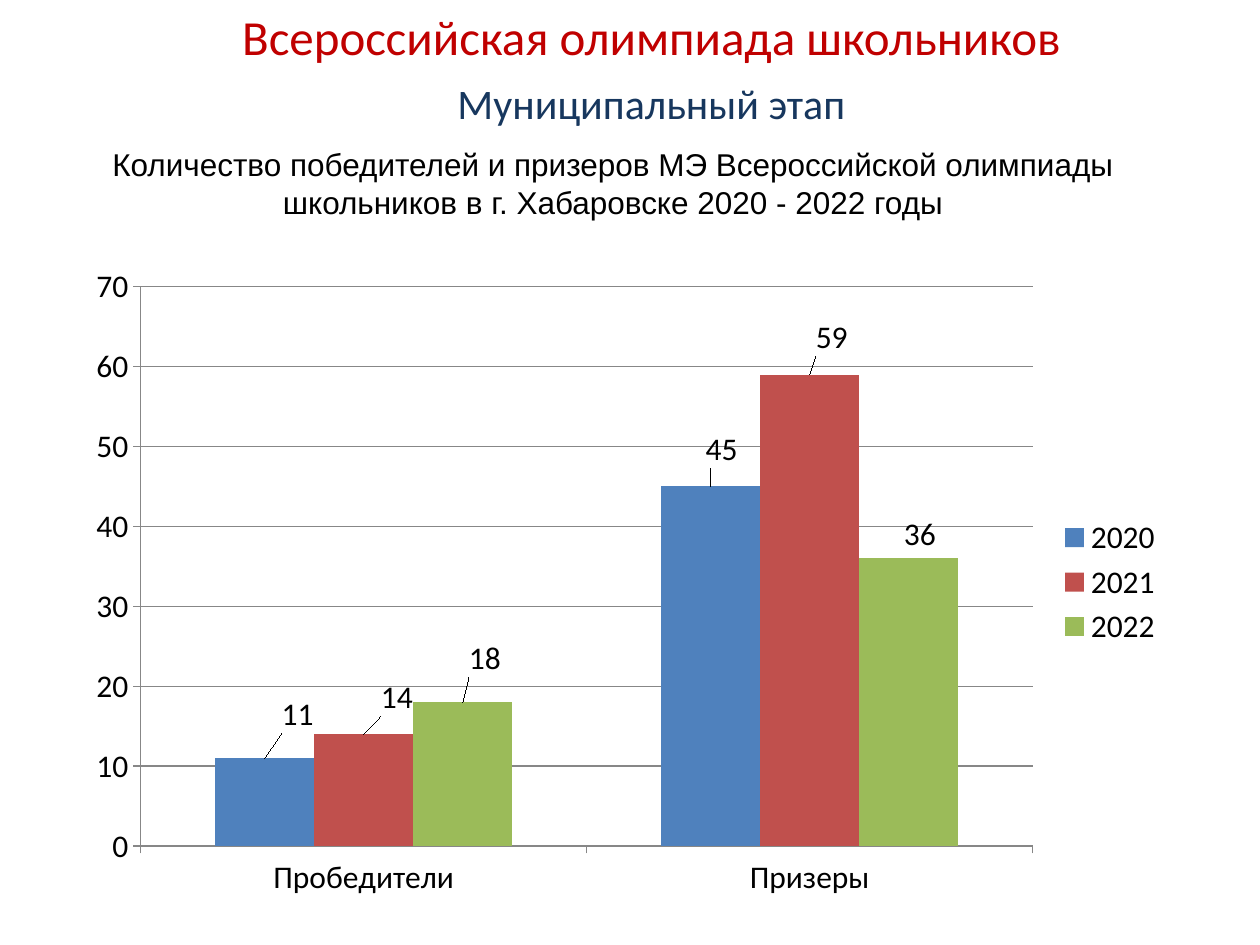
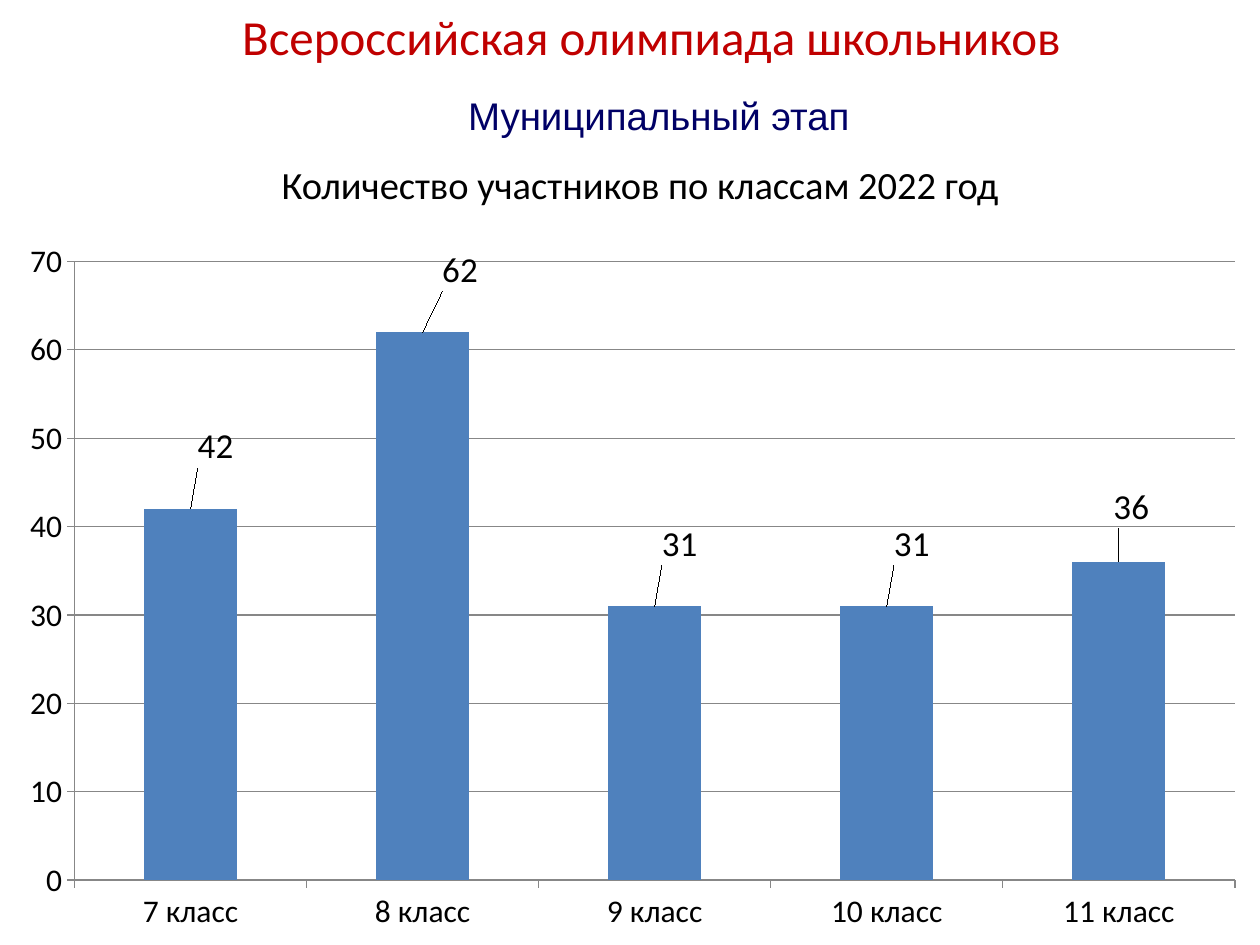
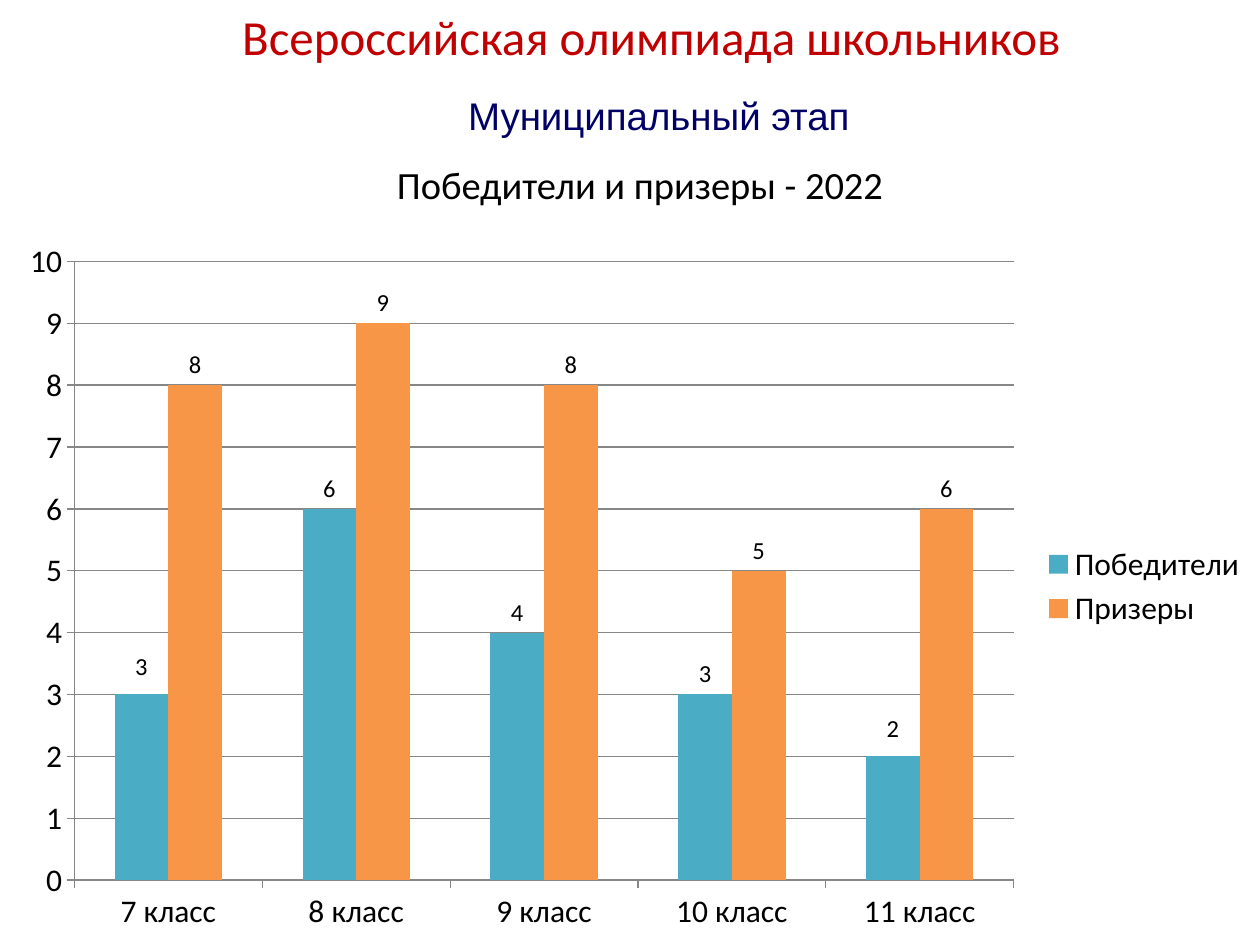
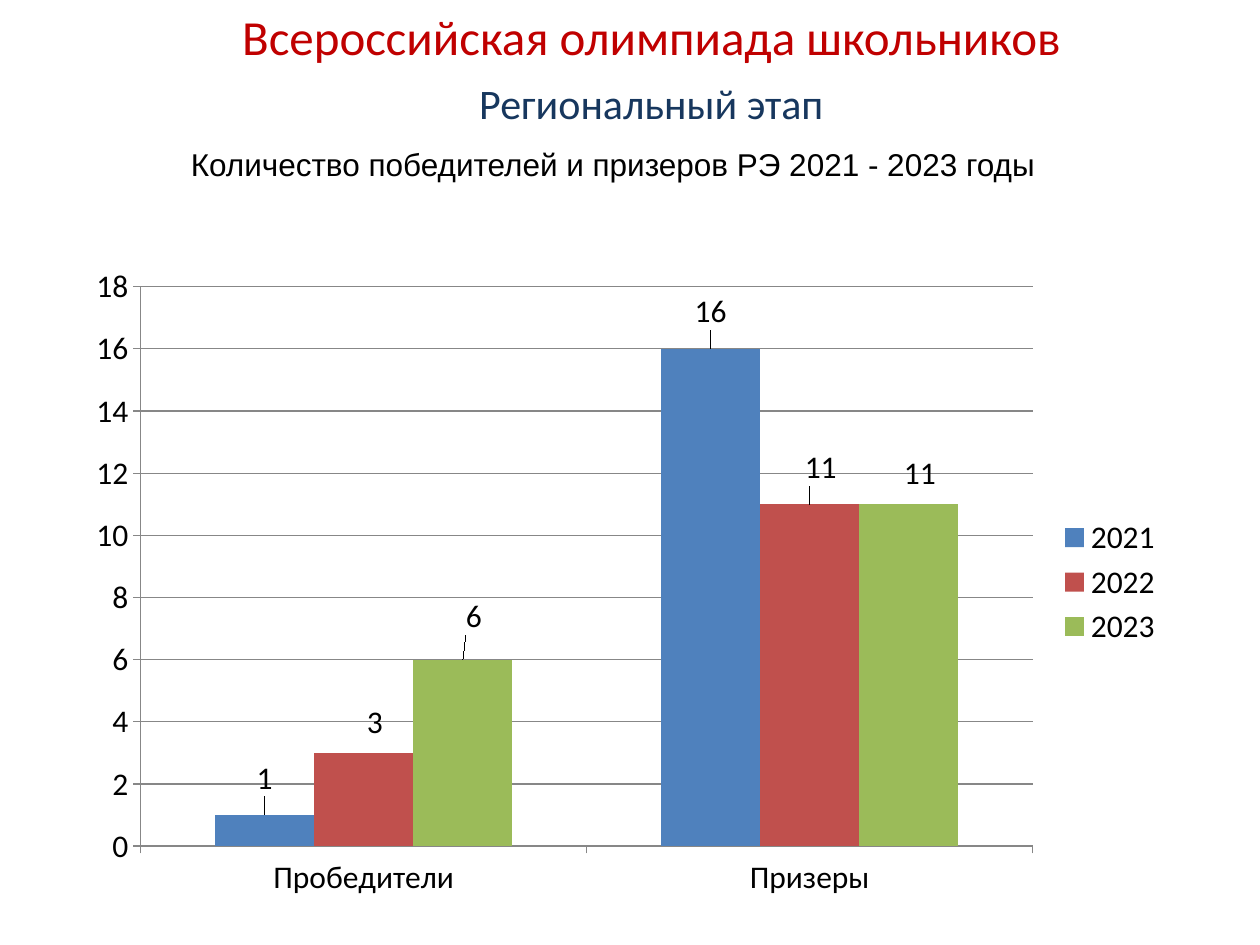
from dataclasses import dataclass

from lxml import etree
from pptx import Presentation
from pptx import util as u
from pptx.chart.data import CategoryChartData
from pptx.dml.color import RGBColor
from pptx.enum import chart as ch, text
from pptx.oxml.ns import qn


@dataclass(frozen=True)
class Theme:
    red: str = "C00000"
    navy: str = "17375E"
    indigo: str = "000066"
    black: str = "000000"
    grid: str = "878787"
    years: tuple = ("4F81BD", "C0504D", "9BBB59")
    awards: tuple = ("4BACC6", "F79646")
    body: str = "Calibri"
    alt: str = "Arial"
    title: int = 28
    stage: int = 24
    heading: int = 22
    label: int = 20
    base: int = 18
    small: int = 14


T = Theme()
TITLE = "Всероссийская олимпиада школьников"
MUNICIPAL = "Муниципальный этап"
RESULTS = ["Пробедители", "Призеры"]
GRADES = [f"{n} класс" for n in range(7, 12)]
TITLE_BOX = (0.34, 0, 9.66, 0.57)
STAGE_BOX = (0.34, 0.57, 9.66, 0.5)
GRADE_STAGE_BOX = (1.85, 0.68, 6.76, 0.47)
GRADE_HEADING_BOX = (1.3, 1.23, 7.56, 0.47)
YEARS_CHART = (0.59, 2.02, 8.74, 5.2)
GRADES_CHART = (0.04, 1.81, 9.96, 5.69)


def assign(obj, values):
    for name, value in values.items():
        setattr(obj, name, value)


class Deck:
    def __init__(self, theme):
        self.theme = theme
        self.prs = Presentation()
        assign(self.prs, {"slide_width": u.Inches(10), "slide_height": u.Inches(7.5)})
        self.s = None

    def add_slide(self):
        self.s = self.prs.slides.add_slide(self.prs.slide_layouts[5])
        sp = self.s.shapes.title
        places = map(u.Inches, TITLE_BOX)
        assign(sp, dict(zip(("left", "top", "width", "height"), places)))
        self.fill_text(sp, TITLE, self.theme.title, self.theme.body, self.theme.red)

    def font(self, font, size, name=None, color=None):
        assign(font, {"size": u.Pt(size), "name": name or self.theme.body})
        font.color.rgb = RGBColor.from_string(color or self.theme.black)

    def fill_text(self, sp, words, size, name, color):
        tf = sp.text_frame
        assign(tf, {
            "word_wrap": True,
            "auto_size": text.MSO_AUTO_SIZE.SHAPE_TO_FIT_TEXT,
            "vertical_anchor": text.MSO_ANCHOR.TOP,
        })
        p = tf.paragraphs[0]
        p.alignment = text.PP_ALIGN.CENTER
        r = p.add_run()
        r.text = words
        self.font(r.font, size, name, color)

    def text(self, box, words, size, name=None, color=None):
        sp = self.s.shapes.add_textbox(*map(u.Inches, box))
        self.fill_text(sp, words, size, name, color)

    def chart(self, box, cats, series, colors, label_size, offsets, legend=True):
        data = CategoryChartData()
        data.categories = cats
        for name, values in series:
            data.add_series(name, values)
        frame = self.s.shapes.add_chart(
            ch.XL_CHART_TYPE.COLUMN_CLUSTERED, *map(u.Inches, box), data)
        chart = frame.chart
        assign(chart, {"has_title": False, "has_legend": legend})
        self.font(chart.font, self.theme.base)
        if legend:
            assign(chart.legend, {
                "position": ch.XL_LEGEND_POSITION.RIGHT,
                "include_in_layout": False,
            })
        self.axes(chart)
        plot = chart.plots[0]
        assign(plot, {"gap_width": 150, "overlap": 0, "vary_by_categories": False})
        for ser, color in zip(plot.series, colors):
            ser.format.fill.solid()
            ser.format.fill.fore_color.rgb = RGBColor.from_string(color)
            labels = ser.data_labels
            assign(labels, {
                "show_value": True,
                "position": ch.XL_LABEL_POSITION.OUTSIDE_END,
            })
            self.font(labels.font, label_size)
        self.shift_labels(chart, offsets, label_size)

    def axes(self, chart):
        lines = [chart.value_axis.major_gridlines.format.line]
        for axis in (chart.category_axis, chart.value_axis):
            axis.major_tick_mark = ch.XL_TICK_MARK.OUTSIDE
            lines.append(axis.format.line)
        for line in lines:
            line.width = u.Pt(0.75)
            line.color.rgb = RGBColor.from_string(self.theme.grid)

    def shift_labels(self, chart, offsets, size):
        for row, col in offsets:
            label = chart.plots[0].series[row].points[col].data_label
            label.position = ch.XL_LABEL_POSITION.OUTSIDE_END
            self.font(label.font, size)
        moves = [offsets[key] for key in sorted(offsets)]
        for label, move in zip(chart.element.iter(qn("c:dLbl")), moves):
            layout = etree.Element(qn("c:layout"))
            manual = etree.SubElement(layout, qn("c:manualLayout"))
            for axis, value in zip("xy", move):
                etree.SubElement(manual, qn(f"c:{axis}")).set("val", str(value))
            label.insert(1, layout)

    def years_slide(self, stage, heading, height, series, offsets):
        self.add_slide()
        self.text(STAGE_BOX, stage, self.theme.stage, color=self.theme.navy)
        self.text((0.12, 1.1, 9.49, height), heading, self.theme.base, self.theme.alt)
        self.chart(YEARS_CHART, RESULTS, series, self.theme.years,
                   self.theme.base, offsets)

    def grades_slide(self, heading, series, colors, size, offsets, legend):
        self.add_slide()
        self.chart(GRADES_CHART, GRADES, series, colors, size, offsets, legend)
        self.text(GRADE_STAGE_BOX, MUNICIPAL, self.theme.heading,
                  self.theme.alt, self.theme.indigo)
        self.text(GRADE_HEADING_BOX, heading, self.theme.heading)


def main():
    deck = Deck(T)
    deck.years_slide(
        MUNICIPAL,
        "Количество победителей и призеров МЭ Всероссийской олимпиады "
        "школьников в г. Хабаровске 2020 - 2022 годы",
        0.71,
        [("2020", (11, 45)), ("2021", (14, 59)), ("2022", (18, 36))],
        {(0, 0): (0.03, -0.03), (0, 1): (0.01, -0.02),
         (1, 0): (0.03, -0.02), (1, 1): (0.02, -0.02),
         (2, 0): (0.02, -0.03), (2, 1): (0.01, 0)},
    )
    deck.grades_slide(
        "Количество участников по классам 2022 год",
        [("Series 1", (42, 62, 31, 31, 36))], T.years, T.label,
        {(0, 0): (0.02, -0.05), (0, 1): (0.03, -0.05), (0, 2): (0.02, -0.05),
         (0, 3): (0.02, -0.05), (0, 4): (0.01, -0.04)},
        legend=False,
    )
    deck.grades_slide(
        "Победители и призеры - 2022",
        [("Победители", (3, 6, 4, 3, 2)), ("Призеры", (8, 9, 8, 5, 6))],
        T.awards, T.small,
        {(0, 0): (0, -0.01), (0, 4): (0, -0.01)},
        legend=True,
    )
    deck.years_slide(
        "Региональный этап",
        "Количество победителей и призеров РЭ 2021 - 2023 годы",
        0.4,
        [("2021", (1, 16)), ("2022", (3, 11)), ("2023", (6, 11))],
        {(0, 0): (0, -0.02), (0, 1): (0, -0.02),
         (1, 0): (0.01, -0.01), (1, 1): (0.01, -0.02),
         (2, 0): (0.01, -0.03), (2, 1): (0.01, -0.01)},
    )
    deck.prs.save("out.pptx")


if __name__ == "__main__":
    main()
